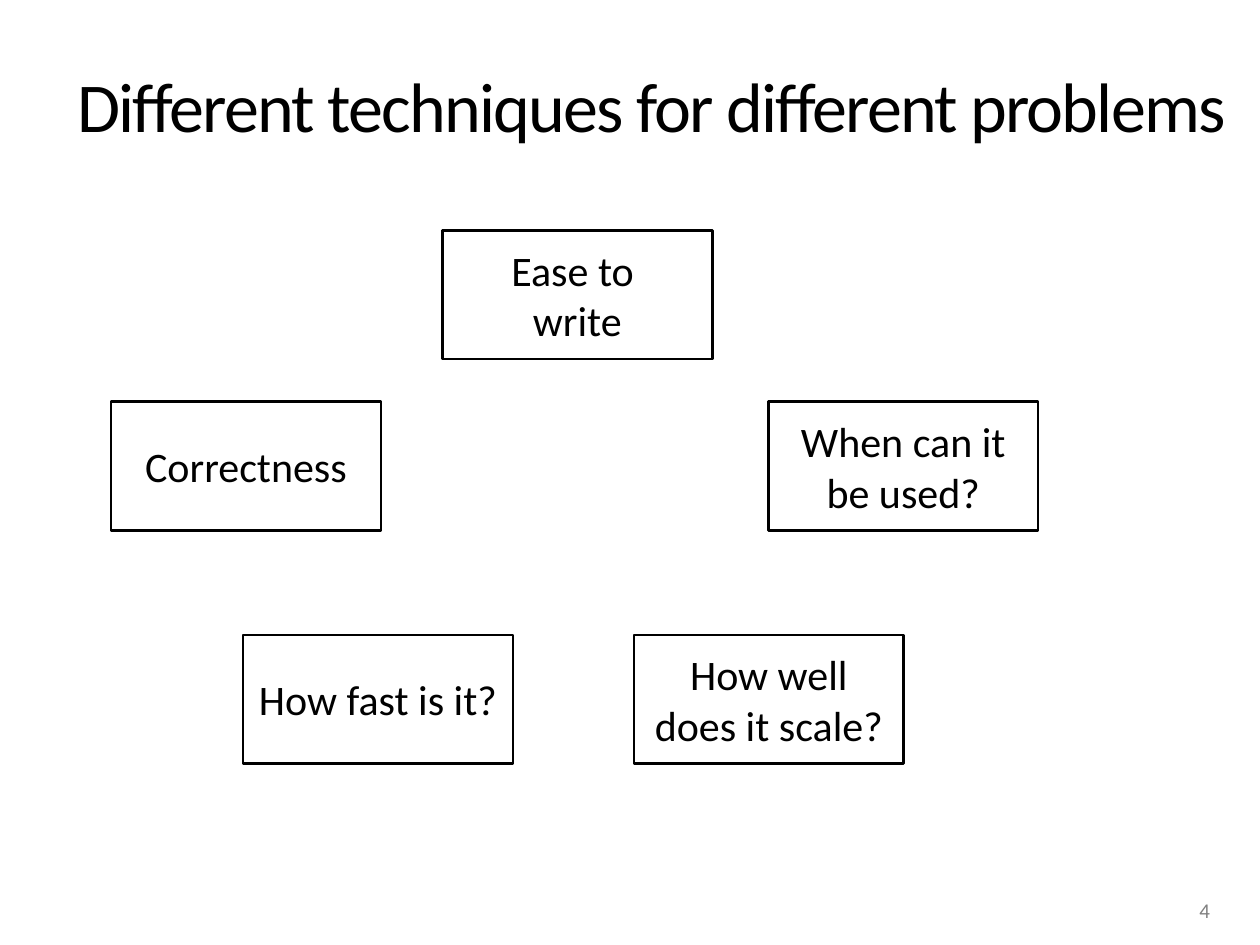
from pptx import Presentation
from pptx.dml.color import RGBColor
from pptx.enum.shapes import MSO_SHAPE
from pptx.enum.text import MSO_ANCHOR, MSO_AUTO_SIZE, PP_ALIGN
from pptx.util import Cm, Pt

BLACK = RGBColor(0x00, 0x00, 0x00)
WHITE = RGBColor(0xFF, 0xFF, 0xFF)
GRAY = RGBColor(0x80, 0x80, 0x80)
RECTANGLE = MSO_SHAPE.RECTANGLE
TOP, MIDDLE, BOTTOM = MSO_ANCHOR.TOP, MSO_ANCHOR.MIDDLE, MSO_ANCHOR.BOTTOM
LEFT, CENTER = PP_ALIGN.LEFT, PP_ALIGN.CENTER
NO_AUTOFIT = MSO_AUTO_SIZE.NONE


def write_text(shape, text, size, color=BLACK, align=LEFT, anchor=TOP, line_spacing=None, tracking=None):
    frame = shape.text_frame
    frame.word_wrap = True
    frame.auto_size = NO_AUTOFIT
    frame.vertical_anchor = anchor
    paragraph = frame.paragraphs[0]
    paragraph.text = text
    paragraph.alignment = align
    if line_spacing:
        paragraph.line_spacing = Pt(line_spacing)
    for run in paragraph.runs:
        run.font.name = "Calibri"
        run.font.size = Pt(size)
        run.font.color.rgb = color
        if tracking:
            run._r.get_or_add_rPr().set("spc", str(tracking * 100))


prs = Presentation()
prs.slide_width, prs.slide_height = Cm(25.4), Cm(19.05)
slide = prs.slides.add_slide(prs.slide_layouts[5])

title = slide.shapes.title
title.left, title.top, title.width, title.height = Cm(1.3), Cm(1.42), Cm(25.76), Cm(2.11)
write_text(title, "Different techniques for different problems", 40, line_spacing=40, tracking=-1)

UPPER_ROW, MIDDLE_ROW, LOWER_ROW = Cm(4.65), Cm(8.1), Cm(12.8)
criteria = [
    ("Correctness", Cm(2.24), MIDDLE_ROW),
    ("Ease to \vwrite", Cm(8.92), UPPER_ROW),
    ("When can it be used?", Cm(15.49), MIDDLE_ROW),
    ("How well does it scale?", Cm(12.78), LOWER_ROW),
    ("How fast is it?", Cm(4.9), LOWER_ROW),
]
for question, left, top in criteria:
    criterion = slide.shapes.add_shape(RECTANGLE, left, top, Cm(5.44), Cm(2.59))
    criterion.shadow.inherit = False
    criterion.fill.solid()
    criterion.fill.fore_color.rgb = WHITE
    criterion.line.color.rgb = BLACK
    criterion.line.width = Pt(1.5)
    write_text(criterion, question, 24, align=CENTER, anchor=MIDDLE)

page_number = slide.shapes.add_textbox(Cm(23.93), Cm(17.7), Cm(1.27), Cm(1.02))
write_text(page_number, "4", 12, color=GRAY, anchor=BOTTOM)

prs.save("out.pptx")
